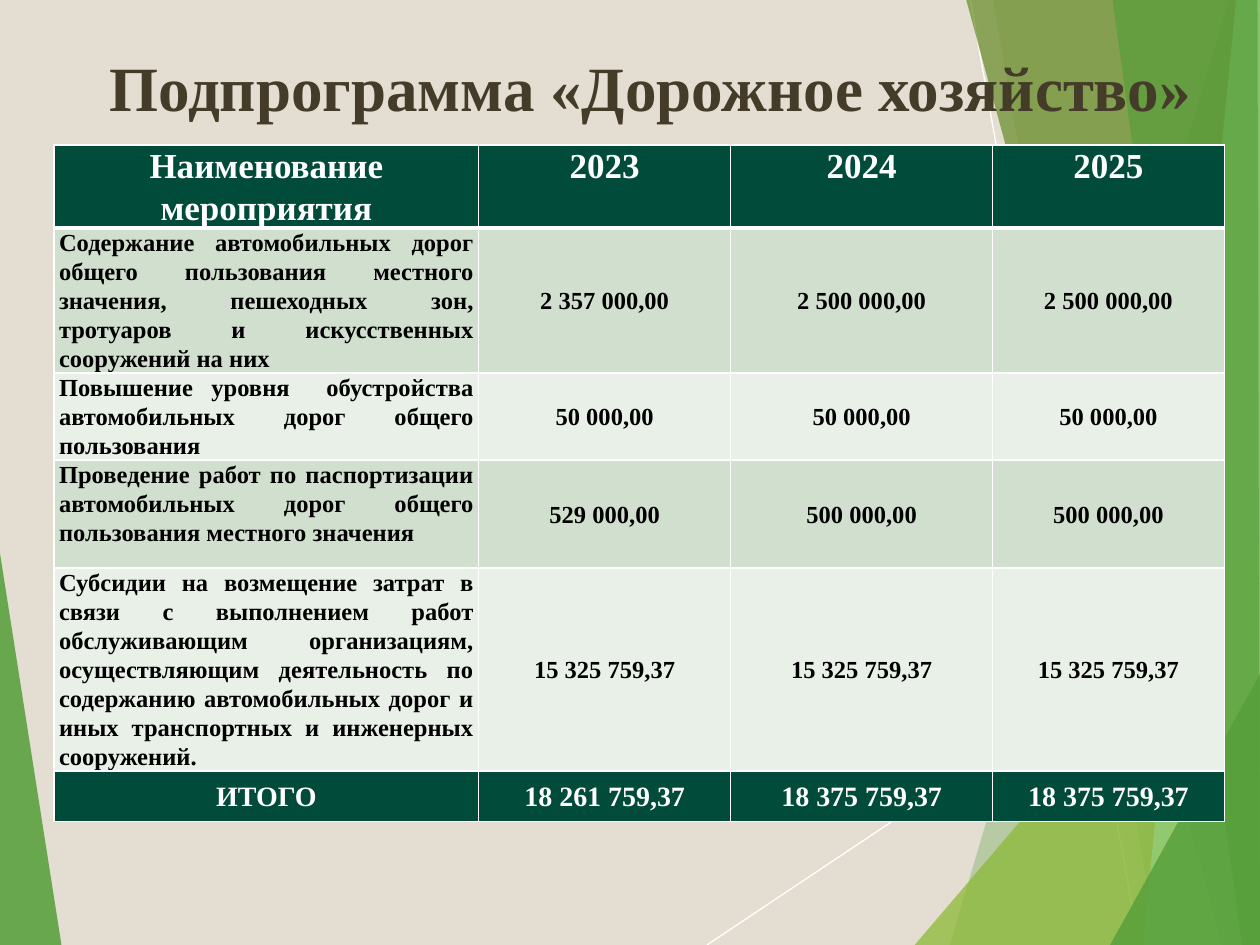
from dataclasses import dataclass

from lxml.etree import SubElement
from pptx import Presentation
from pptx.dml.color import RGBColor
from pptx.enum.shapes import MSO_CONNECTOR
from pptx.enum.text import MSO_ANCHOR, PP_ALIGN
from pptx.oxml import parse_xml
from pptx.oxml.ns import nsdecls, qn
from pptx.util import Cm, Pt


@dataclass(frozen=True)
class Theme:
    font: str = "Times New Roman"
    background: str = "E3DED1"
    title: str = "443C29"
    white: str = "FFFFFF"
    black: str = "000000"
    dark: str = "014B3B"
    bands: tuple = ("D1DFCE", "E9F0E8")
    green: str = "549E39"
    lime: str = "8AB833"
    olive: str = "678A26"
    mint: str = "93D07D"
    title_size: int = 36
    header_size: int = 20
    body_size: int = 14
    total_size: int = 16


theme = Theme()


def write_text(frame, text, size, color, align=PP_ALIGN.CENTER, spacing=1.0, gap=0):
    para = frame.paragraphs[0]
    para.alignment = align
    para.line_spacing = spacing
    para.space_before = para.space_after = Pt(gap)
    span = para.add_run()
    span.text = text
    span.font.name = theme.font
    span.font.size = Pt(size)
    span.font.bold = True
    span.font.color.rgb = RGBColor.from_string(color)


deck = Presentation()
deck.slide_width, deck.slide_height = Cm(25.4), Cm(19.05)
page = deck.slides.add_slide(deck.slide_layouts[5])
page.background.fill.solid()
page.background.fill.fore_color.rgb = RGBColor.from_string(theme.background)

# Thin white lines behind the facets
for ends in [(14.25, 19.05, 25.4, 11.61), (19.56, 0, 22.96, 19.05)]:
    line = page.shapes.add_connector(MSO_CONNECTOR.STRAIGHT, *map(Cm, ends))
    line.line.color.rgb = RGBColor.from_string(theme.white)
    line.line.width = Pt(0.75)
    SubElement(line._element.spPr, qn("a:effectLst"))

# Translucent facets: colour, opacity in percent, corners in centimetres
right, bottom = 25.4, 19.05
facets = [
    (theme.green, 85, [(0, 11.15), (1.24, bottom), (0, bottom)]),
    (theme.green, 30, [(24.77, 0), (19.15, bottom), (right, bottom), (right, 0)]),
    (theme.green, 20, [(20.02, 0), (23.34, bottom), (right, bottom), (right, 0)]),
    (theme.lime, 72, [(18.44, bottom), (right, 10.9), (right, bottom)]),
    (theme.olive, 70, [(19.48, 0), (24.64, bottom), (right, bottom), (right, 0)]),
    (theme.mint, 70, [(24.92, 0), (23.04, bottom), (right, bottom), (right, 0)]),
    (theme.green, 65, [(22.43, 0), (25.04, bottom), (right, bottom), (25.35, 0)]),
    (theme.green, 80, [(22.38, bottom), (right, 13.59), (right, bottom)]),
]
for color, opacity, corners in facets:
    points = [(Cm(x), Cm(y)) for x, y in corners]
    outline = page.shapes.build_freeform(*points[0])
    outline.add_line_segments(points[1:], close=True)
    facet = outline.convert_to_shape()
    facet.shadow.inherit = False
    facet.line.fill.background()
    facet.fill.solid()
    facet.fill.fore_color.rgb = RGBColor.from_string(color)
    tint = facet._element.spPr.find(qn("a:solidFill"))[0]
    SubElement(tint, qn("a:alpha"), val=str(opacity * 1000))

# Title, brought in front of the facets
title = page.shapes.title
title.left, title.top, title.width, title.height = Cm(1.7), Cm(0.74), Cm(22.81), Cm(2)
title.text_frame.vertical_anchor = MSO_ANCHOR.MIDDLE
write_text(title.text_frame, "Подпрограмма «Дорожное хозяйство»",
           size=theme.title_size, color=theme.title)
page.shapes._spTree.append(title._element)

# Budget table
rows = [
    ("Наименование мероприятия", "2023", "2024", "2025"),
    ("Содержание автомобильных дорог общего пользования местного значения, "
     "пешеходных зон, тротуаров и искусственных сооружений на них",
     "2 357 000,00", "2 500 000,00", "2 500 000,00"),
    ("Повышение уровня  обустройства автомобильных дорог общего пользования",
     "50 000,00", "50 000,00", "50 000,00"),
    ("Проведение работ по паспортизации автомобильных дорог общего пользования "
     "местного значения",
     "529 000,00", "500 000,00", "500 000,00"),
    ("Субсидии на возмещение затрат в связи с выполнением работ обслуживающим "
     "организациям, осуществляющим деятельность по содержанию автомобильных дорог "
     "и иных транспортных и инженерных сооружений.",
     "15 325 759,37", "15 325 759,37", "15 325 759,37"),
    ("ИТОГО", "18 261 759,37", "18 375 759,37", "18 375 759,37"),
]
widths = [8.56, 5.08, 5.28, 4.67]
heights = [1.57, 2.74, 1.65, 2.18, 3.84, 1.02]
last = len(rows) - 1
table = page.shapes.add_table(len(rows), len(widths), Cm(1.09), Cm(2.92),
                              Cm(sum(widths)), Cm(sum(heights))).table
for column, width in zip(table.columns, widths):
    column.width = Cm(width)
for row, height in zip(table.rows, heights):
    row.height = Cm(height)

for r, values in enumerate(rows):
    is_header, is_total = r == 0, r == last
    is_body = not (is_header or is_total)
    size = (theme.header_size if is_header
            else theme.total_size if is_total else theme.body_size)
    for c, value in enumerate(values):
        cell = table.cell(r, c)
        is_name = is_body and c == 0
        cell.margin_left = cell.margin_right = Cm(0.1)
        cell.margin_top = cell.margin_bottom = 0
        cell.vertical_anchor = MSO_ANCHOR.TOP if is_header or is_name else MSO_ANCHOR.MIDDLE
        cell.fill.solid()
        cell.fill.fore_color.rgb = RGBColor.from_string(
            theme.bands[(r - 1) % 2] if is_body else theme.dark)
        write_text(cell.text_frame, value, size=size,
                   color=theme.black if is_body else theme.white,
                   align=PP_ALIGN.JUSTIFY if is_name else PP_ALIGN.CENTER,
                   spacing=1.07,
                   gap=2 if is_header or (c == 0 and r > 2) else 0)
        # White borders, heavier under the header
        for place, side in enumerate("LRTB"):
            heavy = (r, side) in ((0, "B"), (1, "T"))
            border = parse_xml(
                f'<a:ln{side} {nsdecls("a")} w="{Pt(3 if heavy else 1)}"><a:solidFill>'
                f'<a:srgbClr val="{theme.white}"/></a:solidFill></a:ln{side}>')
            cell._tc.get_or_add_tcPr().insert(place, border)

deck.save("out.pptx")
